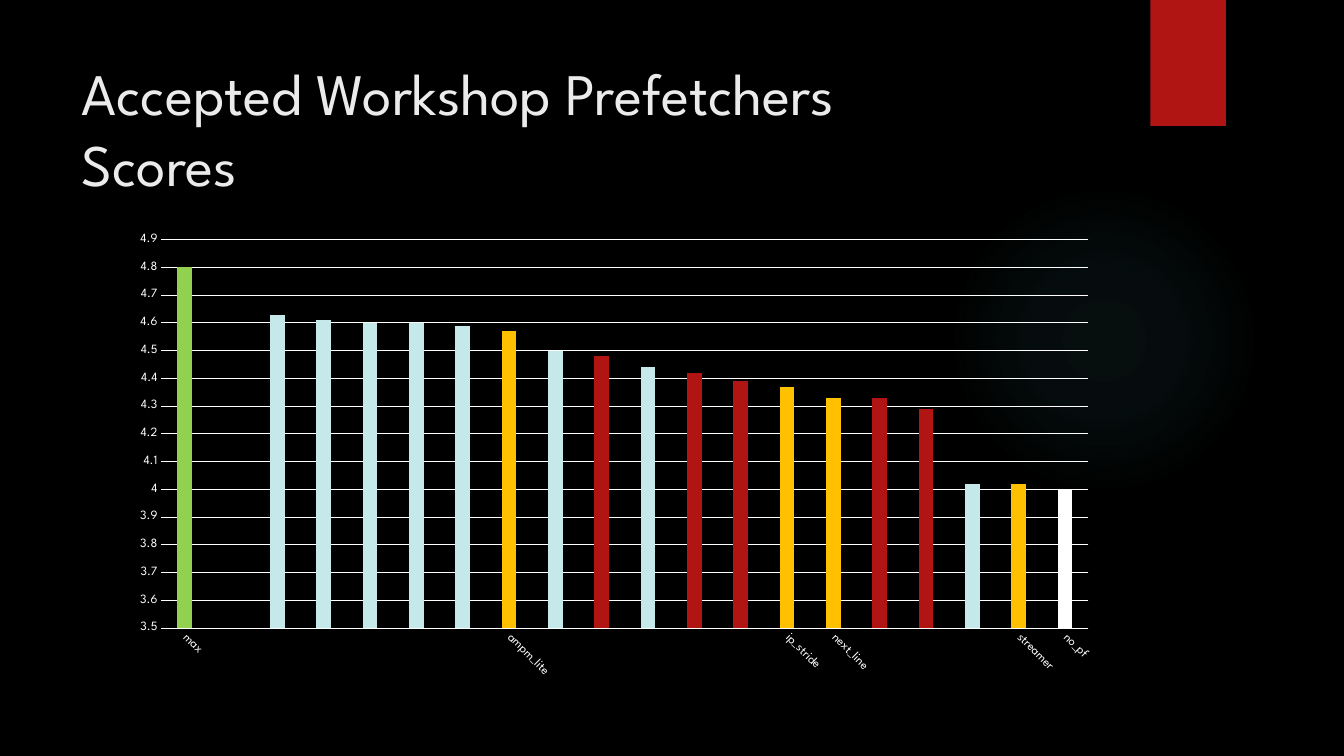
import pptx
import pptx.chart.data
import pptx.dml.color
import pptx.enum.chart
import pptx.enum.shapes
import pptx.enum.text
import pptx.oxml
import pptx.oxml.ns
import pptx.util
from pptx.util import Inches

FONT = "League Spartan"
COLOURS = {
    "background": "000000",
    "title": "EBEBEB",
    "white": "FFFFFF",
    "red": "B01513",
    "pale": "C5E8EA",
    "amber": "FFC000",
    "green": "92D050",
    "glow": "50B9C1",
}
SCORES = [
    ("max", 4.8, "green"), ("", None, "red"), ("", 4.63, "pale"), ("", 4.61, "pale"),
    ("", 4.6, "pale"), ("", 4.6, "pale"), ("", 4.59, "pale"), ("ampm_lite", 4.57, "amber"),
    ("", 4.5, "pale"), ("", 4.48, "red"), ("", 4.44, "pale"), ("", 4.42, "red"),
    ("", 4.39, "red"), ("ip_stride", 4.37, "amber"), ("next_line", 4.33, "amber"),
    ("", 4.33, "red"), ("", 4.29, "red"), ("", 4.02, "pale"),
    ("streamer", 4.02, "amber"), ("no_pf", 4, "white"),
]


def rgb(name):
    return pptx.dml.color.RGBColor.from_string(COLOURS[name])


def style_font(font, size, colour):
    font.name = FONT
    font.size = pptx.util.Pt(size)
    font.color.rgb = rgb(colour)


deck = pptx.Presentation()
deck.slide_width = Inches(13.33)
deck.slide_height = Inches(7.5)
page = deck.slides.add_slide(deck.slide_layouts[5])
page.background.fill.solid()
page.background.fill.fore_color.rgb = rgb("background")

# Faint radial glow
glow = page.shapes.add_shape(
    pptx.enum.shapes.MSO_SHAPE.OVAL, Inches(9.41), Inches(1.83), Inches(3.08), Inches(3.08))
glow.shadow.inherit = False
glow.line.fill.background()
stops = "".join(
    f'<a:gs pos="{position}000"><a:srgbClr val="{COLOURS["glow"]}">'
    f'<a:alpha val="{alpha}000"/></a:srgbClr></a:gs>'
    for position, alpha in [(0, 7), (36, 6), (69, 0)])
gradient = pptx.oxml.parse_xml(
    f'<a:gradFill {pptx.oxml.ns.nsdecls("a")}><a:gsLst>{stops}</a:gsLst>'
    '<a:path path="circle"><a:fillToRect l="50000" t="50000" r="50000" b="50000"/></a:path>'
    '</a:gradFill>')
glow.element.spPr.find(pptx.oxml.ns.qn("a:prstGeom")).addnext(gradient)

ribbon = page.shapes.add_shape(
    pptx.enum.shapes.MSO_SHAPE.RECTANGLE, Inches(11.41), 0, Inches(0.75), Inches(1.25))
ribbon.shadow.inherit = False
ribbon.fill.solid()
ribbon.fill.fore_color.rgb = rgb("red")
ribbon.line.fill.background()

title = page.shapes.title
title.left, title.top = Inches(0.71), Inches(0.5)
title.width, title.height = Inches(10.29), Inches(1.53)
title.text_frame.text = "Accepted Workshop Prefetchers\vScores"
title.text_frame.word_wrap = True
title.text_frame.auto_size = pptx.enum.text.MSO_AUTO_SIZE.NONE
title.text_frame.vertical_anchor = pptx.enum.text.MSO_ANCHOR.MIDDLE
heading = title.text_frame.paragraphs[0]
heading.alignment = pptx.enum.text.PP_ALIGN.LEFT
for span in heading.runs:
    style_font(span.font, 42, "title")

# Score chart
data = pptx.chart.data.CategoryChartData()
data.categories = [label for label, score, colour in SCORES]
data.add_series("Series 1", [score for label, score, colour in SCORES])
chart = page.shapes.add_chart(
    pptx.enum.chart.XL_CHART_TYPE.COLUMN_CLUSTERED,
    Inches(1.21), Inches(2.24), Inches(9.78), Inches(4.59), data).chart
chart.has_title = False
chart.has_legend = False
style_font(chart.font, 10, "white")

plot = chart.plots[0]
plot.vary_by_categories = False
plot.gap_width = 219
plot.overlap = -27
series = plot.series[0]
series.invert_if_negative = False
series.format.fill.solid()
series.format.fill.fore_color.rgb = rgb("red")
for index, (label, score, colour) in enumerate(SCORES):
    if colour != "red":
        bar = series.points[index].format.fill
        bar.solid()
        bar.fore_color.rgb = rgb(colour)

for axis in (chart.category_axis, chart.value_axis):
    axis.major_tick_mark = pptx.enum.chart.XL_TICK_MARK.NONE
    axis.minor_tick_mark = pptx.enum.chart.XL_TICK_MARK.NONE
    style_font(axis.tick_labels.font, 9, "white")

scores = chart.value_axis
scores.minimum_scale = 3.5
scores.maximum_scale = 4.9
scores.major_unit = 0.1
scores.tick_labels.number_format = "General"
scores.tick_labels.number_format_is_linked = False
scores.format.line.fill.background()
scores.has_major_gridlines = True
for line in (scores.major_gridlines.format.line, chart.category_axis.format.line):
    line.color.rgb = rgb("white")
    line.width = pptx.util.Pt(0.75)

# Slanted category labels and a fixed plot area
labels = chart.category_axis._element.find(pptx.oxml.ns.qn("c:txPr"))
labels.find(pptx.oxml.ns.qn("a:bodyPr")).set("rot", "2700000")
plot_area = chart._chartSpace.chart.plotArea
for old_layout in plot_area.findall(pptx.oxml.ns.qn("c:layout")):
    plot_area.remove(old_layout)
plot_area.insert(0, pptx.oxml.parse_xml(
    f'<c:layout {pptx.oxml.ns.nsdecls("c")}><c:manualLayout><c:layoutTarget val="inner"/>'
    '<c:xMode val="edge"/><c:yMode val="edge"/>'
    '<c:x val="0.04"/><c:y val="0.03"/><c:w val="0.94"/><c:h val="0.84"/>'
    '</c:manualLayout></c:layout>'))

deck.save("out.pptx")
